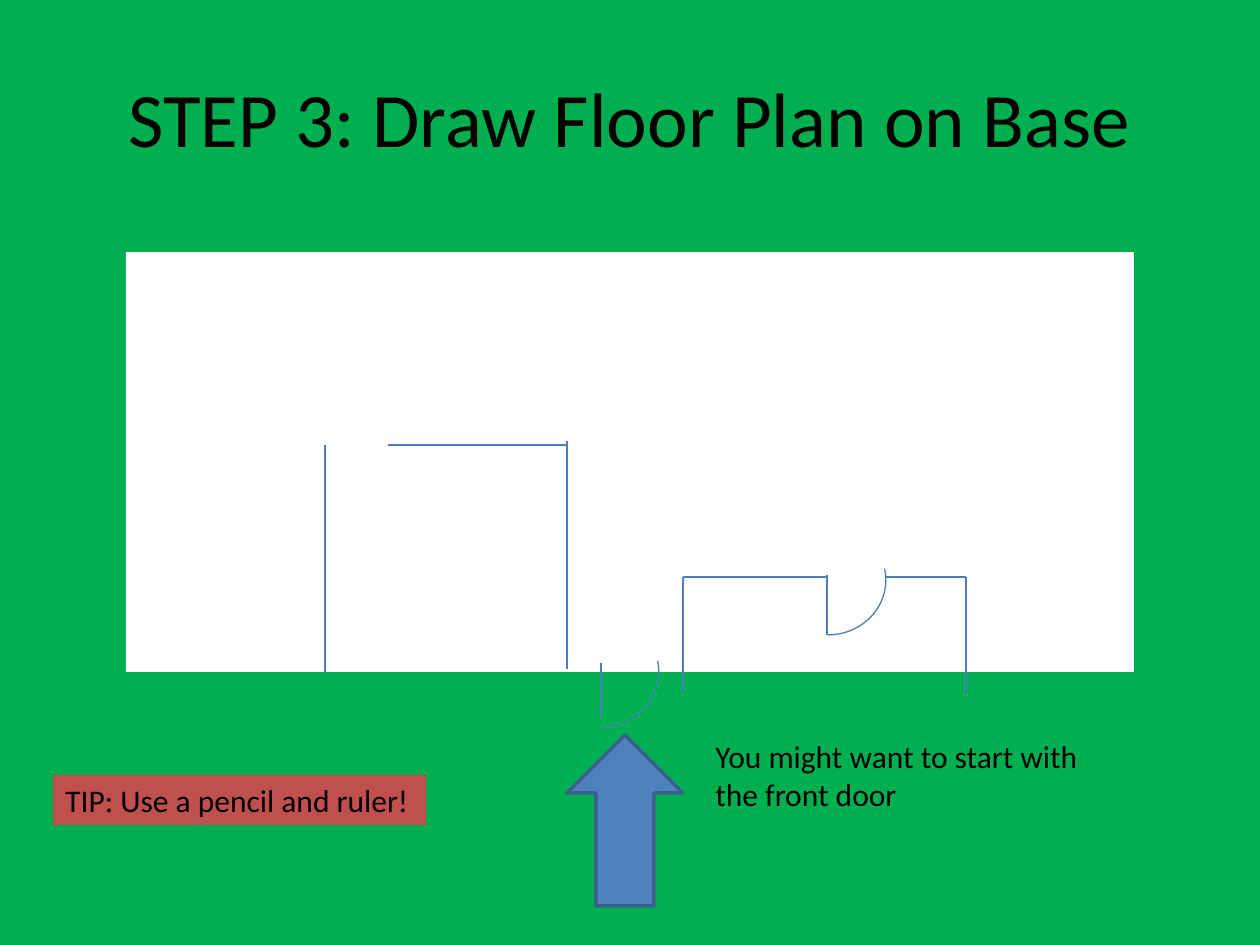
"""Build the slide on drawing a floor plan on the base."""
from pptx import Presentation
from pptx.dml.color import RGBColor
from pptx.enum.shapes import MSO_CONNECTOR, MSO_SHAPE
from pptx.enum.text import MSO_ANCHOR, PP_ALIGN
from pptx.oxml.ns import qn
from pptx.util import Pt
from lxml import etree

PX = 914400 // 126
LINE = MSO_CONNECTOR.STRAIGHT
RECT, ARC, ARROW = MSO_SHAPE.RECTANGLE, MSO_SHAPE.ARC, MSO_SHAPE.UP_ARROW
MIDDLE, LEFT, CENTER = MSO_ANCHOR.MIDDLE, PP_ALIGN.LEFT, PP_ALIGN.CENTER
HUES = {"grass": "00B050", "base": "FFFFFF", "wall": "4B7EBC",
        "arrow": "4F81BD", "edge": "3A5F8C", "tip": "C0504D", "ink": "000000"}
HUES = {name: RGBColor.from_string(code) for name, code in HUES.items()}


def add_form(kind, box, fill=None, edge=None, width=0.75):
    form = slide.shapes.add_shape(kind, *[n * PX for n in box])
    form.shadow.inherit = False
    for paint, hue in ((form.fill, fill), (form.line.fill, edge)):
        if hue:
            paint.solid()
            paint.fore_color.rgb = HUES[hue]
        else:
            paint.background()
    if edge:
        form.line.width = Pt(width)
    return form


def add_text(box, text, size, align=LEFT, wrap=False, fill=None):
    note = slide.shapes.add_textbox(*[n * PX for n in box])
    if fill:
        note.fill.solid()
        note.fill.fore_color.rgb = HUES[fill]
    frame = note.text_frame
    frame.text = text
    frame.word_wrap = wrap
    para = frame.paragraphs[0]
    para.alignment = align
    for run in para.runs:
        run.font.size = Pt(size)
        run.font.name = "Calibri"
        run.font.color.rgb = HUES["ink"]
    return frame


deck = Presentation()
deck.slide_width, deck.slide_height = 1260 * PX, 945 * PX
slide = deck.slides.add_slide(deck.slide_layouts[6])
slide.background.fill.solid()
slide.background.fill.fore_color.rgb = HUES["grass"]

title = add_text((63, 38, 1134, 157), "STEP 3: Draw Floor Plan on Base", 44, CENTER, True)
title.vertical_anchor = MIDDLE
add_form(RECT, (126, 252, 1008, 420), "base")

walls = [
    (567, 669, 567, 441), (683, 693, 683, 577), (827, 577, 683, 577),
    (966, 693, 966, 577), (827, 635, 827, 575), (885, 577, 966, 577),
    (601, 717, 601, 663), (325, 672, 325, 445), (388, 445, 567, 445),
]
for ends in walls:
    wall = slide.shapes.add_connector(LINE, *[n * PX for n in ends])
    wall.line.color.rgb = HUES["wall"]
    wall.line.width = Pt(0.75)
    etree.SubElement(wall.element.spPr, qn("a:effectLst"))

for left, top in ((543, 617), (770, 525)):
    door = add_form(ARC, (left, top, 116, 110), edge="wall")
    door.adjustments[0] = 162
    door.adjustments[1] = 6.68
    door.element.spPr.get_or_add_xfrm().set("flipV", "1")

add_form(ARROW, (567, 735, 116, 171), "arrow", "edge", 2)
add_text((703, 731, 399, 89), "You might want to start with \vthe front door", 18)
add_text((53, 775, 373, 50), "TIP: Use a pencil and ruler!", 18, fill="tip")

deck.save("out.pptx")
